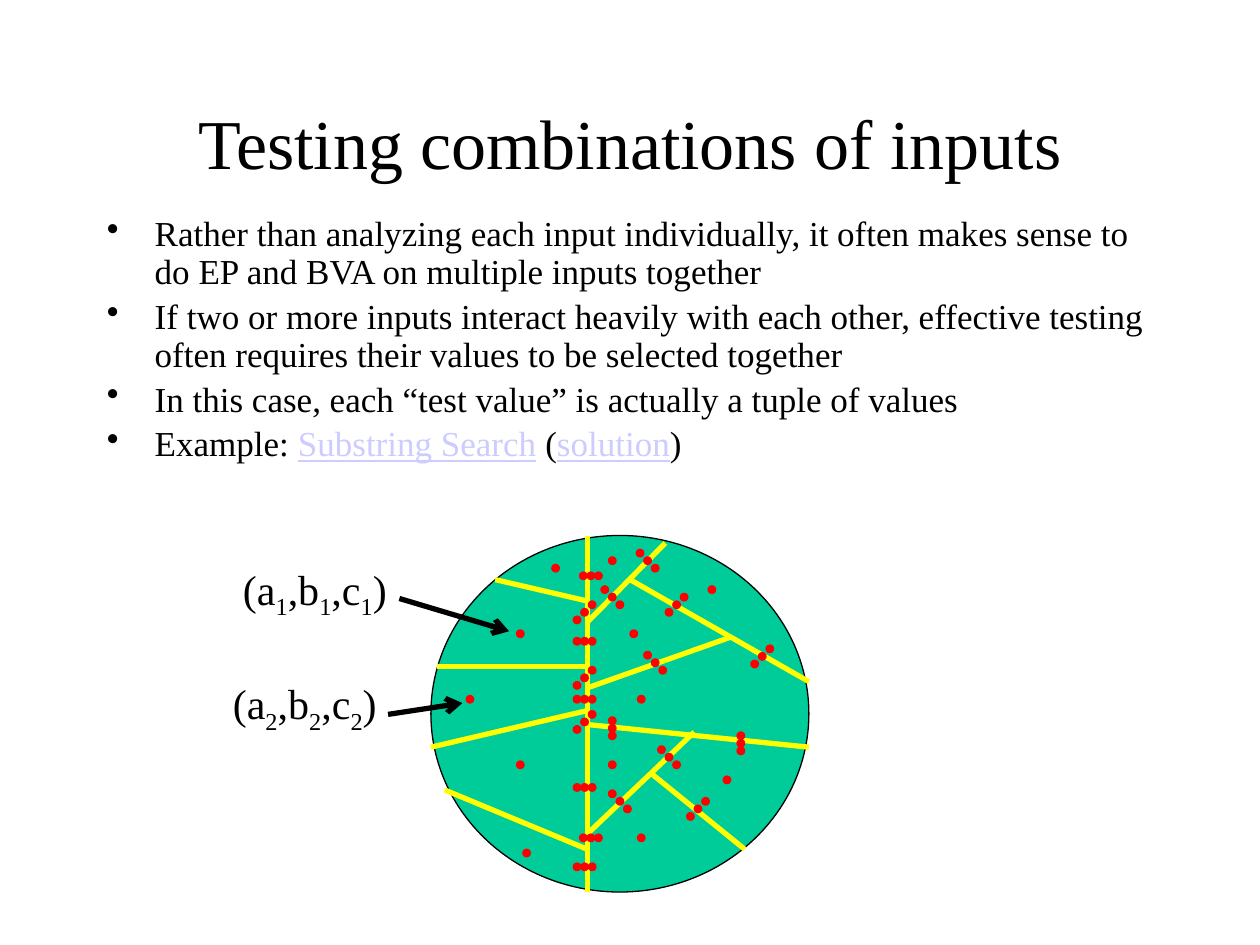
from lxml import etree
from pptx import Presentation
from pptx.dml.color import RGBColor
from pptx.enum import shapes, text
from pptx.oxml import ns
from pptx.util import Inches, Pt

FONT = "Times New Roman"
BLACK = RGBColor(0x00, 0x00, 0x00)
GREEN = RGBColor(0x00, 0xCC, 0x99)
YELLOW = RGBColor(0xFF, 0xFF, 0x00)
RED = RGBColor(0xFF, 0x00, 0x00)
LINK = RGBColor(0xCC, 0xCC, 0xFF)

TITLE = "Testing combinations of inputs"
# Each bullet is a list of (text, looks like a link)
BULLETS = [
    [("Rather than analyzing each input individually, it often makes sense to "
      "do EP and BVA on multiple inputs together", False)],
    [("If two or more inputs interact heavily with each other, effective testing "
      "often requires their values to be selected together", False)],
    [("In this case, each “test value” is actually a tuple of values", False)],
    [("Example: ", False), ("Substring Search", True), (" (", False),
     ("solution", True), (")", False)],
]

DOMAIN = (3.42, 4.25, 3, 2.83)
SPLIT_X = 4.66
PARTITION_LINES = [
    ((SPLIT_X, 4.25), (SPLIT_X, 7.08)),
    ((5.28, 4.31), (SPLIT_X, 4.94)),
    ((5, 4.6), (6.42, 5.41)),
    ((5.79, 5.06), (SPLIT_X, 5.46)),
    ((SPLIT_X, 5.75), (6.42, 5.93)),
    ((5.51, 5.81), (SPLIT_X, 6.62)),
    ((5.17, 6.14), (5.91, 6.74)),
    ((SPLIT_X, 4.77), (3.93, 4.6)),
    ((SPLIT_X, 5.29), (3.47, 5.29)),
    ((SPLIT_X, 5.64), (3.42, 5.93)),
    ((SPLIT_X, 6.74), (3.53, 6.27)),
]

DOT_SIZE = 0.06
# One test value inside each partition: left, top
INNER_DOTS = [
    (5, 5), (4.83, 4.42), (5.62, 4.65), (5.06, 5.52), (4.83, 6.04), (5.74, 6.16),
    (5.06, 6.62), (4.38, 4.48), (4.1, 5), (3.7, 5.52), (4.1, 6.04), (4.15, 6.74),
]
# Three test values across each boundary: left and top of the middle dot,
# grouped by the direction (x, y) of the row
BOUNDARY_DOTS = {
    (1, 0): [(4.66, 4.54), (4.61, 5.06), (4.61, 5.52), (4.61, 6.22),
             (4.66, 6.62), (4.61, 6.85)],
    (0, 1): [(5.85, 5.87), (4.83, 5.75)],
    (1, 1): [(4.83, 4.71), (5.17, 5.23), (5.28, 5.98), (4.89, 6.33), (5.11, 4.42)],
    (1, -1): [(5.34, 4.77), (6.02, 5.18), (5.51, 6.39), (4.61, 4.83),
              (4.61, 5.35), (4.61, 5.7)],
}

# Subscript, label box, arrow start, arrow end
TUPLES = [
    ("1", (1.83, 4.42, 1.4, 0.51), (3.17, 4.75), (4.04, 5.01)),
    ("2", (1.75, 5.33, 1.4, 0.51), (3.08, 5.67), (3.67, 5.58)),
]


def add_text_box(slide, box, wrap=True):
    frame = slide.shapes.add_textbox(*map(Inches, box)).text_frame
    frame.word_wrap = wrap
    return frame


def add_run(paragraph, words, size, color=BLACK):
    run = paragraph.add_run()
    run.text = words
    run.font.name = FONT
    run.font.size = Pt(size)
    run.font.color.rgb = color
    return run


def add_line(slide, start, end, color, arrow=False):
    line = slide.shapes.add_connector(
        shapes.MSO_CONNECTOR.STRAIGHT, *map(Inches, start + end))
    line.line.color.rgb = color
    line.line.width = Pt(3)
    if arrow:
        outline = line.line._get_or_add_ln()
        etree.SubElement(outline, ns.qn("a:tailEnd"), type="arrow")
    etree.SubElement(line._element.spPr, ns.qn("a:effectLst"))


def add_ellipse(slide, box, fill, outline):
    ellipse = slide.shapes.add_shape(shapes.MSO_SHAPE.OVAL, *map(Inches, box))
    ellipse.shadow.inherit = False
    ellipse.fill.solid()
    ellipse.fill.fore_color.rgb = fill
    ellipse.line.color.rgb = outline
    ellipse.line.width = Pt(0.75)


def add_title(slide):
    frame = add_text_box(slide, (0.75, 0.5, 8.5, 1.25))
    frame.vertical_anchor = text.MSO_ANCHOR.MIDDLE
    paragraph = frame.paragraphs[0]
    paragraph.alignment = text.PP_ALIGN.CENTER
    add_run(paragraph, TITLE, 40)


def add_bullets(slide):
    frame = add_text_box(slide, (0.75, 1.67, 8.5, 3))
    for index, pieces in enumerate(BULLETS):
        paragraph = frame.add_paragraph() if index else frame.paragraphs[0]
        paragraph.line_spacing = 0.9
        paragraph.space_before = Pt(4)
        properties = paragraph._p.get_or_add_pPr()
        properties.set("marL", str(Inches(0.38)))
        properties.set("indent", str(Inches(-0.38)))
        etree.SubElement(properties, ns.qn("a:buChar"), char="•")
        for words, is_link in pieces:
            run = add_run(paragraph, words, 20, LINK if is_link else BLACK)
            run.font.underline = is_link


def add_domain(slide):
    """Draw the input domain, its partitions and the chosen test values."""
    add_ellipse(slide, DOMAIN, GREEN, BLACK)
    for start, end in PARTITION_LINES:
        add_line(slide, start, end, YELLOW)
    dots = INNER_DOTS + [
        (left + step * dx * DOT_SIZE, top + step * dy * DOT_SIZE)
        for (dx, dy), middles in BOUNDARY_DOTS.items()
        for left, top in middles
        for step in (-1, 0, 1)
    ]
    for left, top in dots:
        add_ellipse(slide, (left, top, DOT_SIZE, DOT_SIZE), RED, RED)


def add_tuple_labels(slide):
    for subscript, box, start, end in TUPLES:
        paragraph = add_text_box(slide, box, wrap=False).paragraphs[0]
        for letter in ("(a", ",b", ",c"):
            add_run(paragraph, letter, 24)
            run = add_run(paragraph, subscript, 24)
            run._r.get_or_add_rPr().set("baseline", "-25000")
        add_run(paragraph, ")", 24)
        add_line(slide, start, end, BLACK, arrow=True)


def main():
    presentation = Presentation()
    presentation.slide_width = Inches(10)
    presentation.slide_height = Inches(7.5)
    slide = presentation.slides.add_slide(presentation.slide_layouts[6])
    add_title(slide)
    add_bullets(slide)
    add_domain(slide)
    add_tuple_labels(slide)
    presentation.save("out.pptx")


if __name__ == "__main__":
    main()
